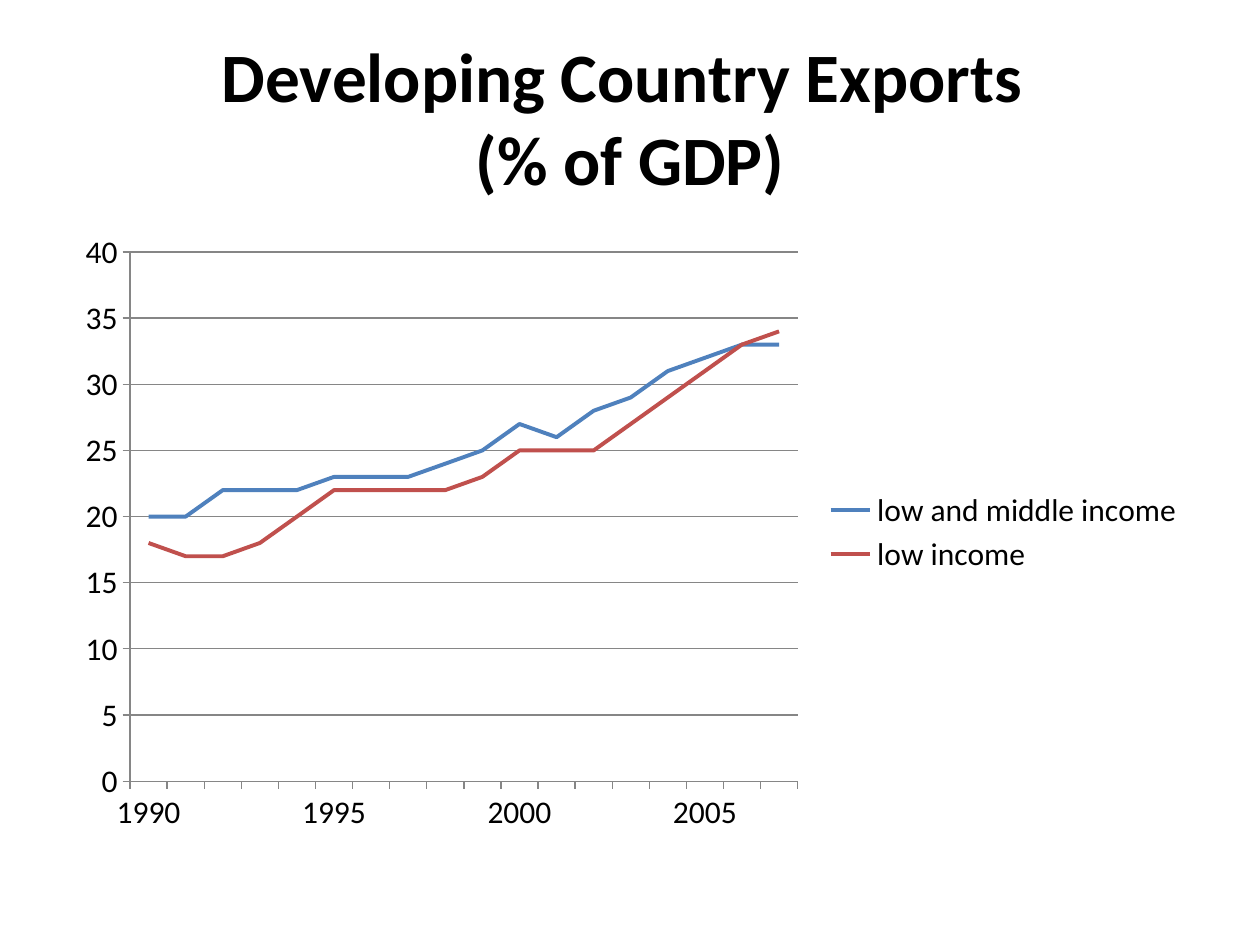
from pptx import Presentation
from pptx.chart.data import CategoryChartData
from pptx.dml.color import RGBColor
from pptx.enum.chart import XL_CHART_TYPE, XL_LEGEND_POSITION, XL_TICK_MARK
from pptx.enum.text import MSO_ANCHOR, PP_ALIGN
from pptx.util import Inches, Pt

LINE = XL_CHART_TYPE.LINE
LEGEND_RIGHT = XL_LEGEND_POSITION.RIGHT
TICK_OUTSIDE = XL_TICK_MARK.OUTSIDE
MIDDLE = MSO_ANCHOR.MIDDLE
CENTER = PP_ALIGN.CENTER

FONT = "Calibri"
BLACK = "000000"
GRAY = "868686"
TITLE_LINES = ["Developing Country Exports ", "(% of GDP)"]
YEARS = [str(year) if year % 5 == 0 else "" for year in range(1990, 2008)]
EXPORTS = [
    ("low and middle income", "4F81BD",
     [20, 20, 22, 22, 22, 23, 23, 23, 24, 25, 27, 26, 28, 29, 31, 32, 33, 33]),
    ("low income", "C0504D",
     [18, 17, 17, 18, 20, 22, 22, 22, 22, 23, 25, 25, 25, 27, 29, 31, 33, 34]),
]


def color(hex_value):
    return RGBColor.from_string(hex_value)


def style_font(font, size, bold=False):
    font.name = FONT
    font.size = Pt(size)
    font.bold = bold
    font.color.rgb = color(BLACK)


def style_line(line, hex_value, width):
    line.color.rgb = color(hex_value)
    line.width = Pt(width)


def add_title(slide):
    title = slide.shapes.title
    title.left, title.top = Inches(0.5), Inches(0.3)
    title.width, title.height = Inches(9), Inches(1.25)
    title.text_frame.vertical_anchor = MIDDLE
    paragraph = title.text_frame.paragraphs[0]
    paragraph.alignment = CENTER
    for index, wording in enumerate(TITLE_LINES):
        if index:
            paragraph.add_line_break()
        run = paragraph.add_run()
        run.text = wording
        style_font(run.font, 39.6, bold=True)


def style_axis(axis):
    axis.major_tick_mark = TICK_OUTSIDE
    style_line(axis.format.line, GRAY, 0.75)


def add_exports_chart(slide):
    exports = CategoryChartData(number_format="General")
    exports.categories = YEARS
    for name, _, values in EXPORTS:
        exports.add_series(name, values)
    chart = slide.shapes.add_chart(
        LINE, Inches(0.5), Inches(1.75), Inches(9), Inches(4.95), exports
    ).chart
    style_font(chart.font, 18)
    chart.has_title = False
    chart.has_legend = True
    chart.legend.position = LEGEND_RIGHT
    chart.legend.include_in_layout = False

    style_axis(chart.category_axis)
    shares = chart.value_axis
    style_axis(shares)
    shares.minimum_scale, shares.maximum_scale = 0, 40
    shares.major_unit = 5
    shares.has_major_gridlines = True
    style_line(shares.major_gridlines.format.line, GRAY, 0.75)

    plot = chart.plots[0]
    plot.vary_by_categories = False
    for series, (_, line_color, _) in zip(plot.series, EXPORTS):
        series.smooth = False
        style_line(series.format.line, line_color, 2.25)


def main():
    deck = Presentation()
    deck.slide_width, deck.slide_height = Inches(10), Inches(7.5)
    slide = deck.slides.add_slide(deck.slide_layouts[5])
    add_title(slide)
    add_exports_chart(slide)
    deck.save("out.pptx")


if __name__ == "__main__":
    main()
